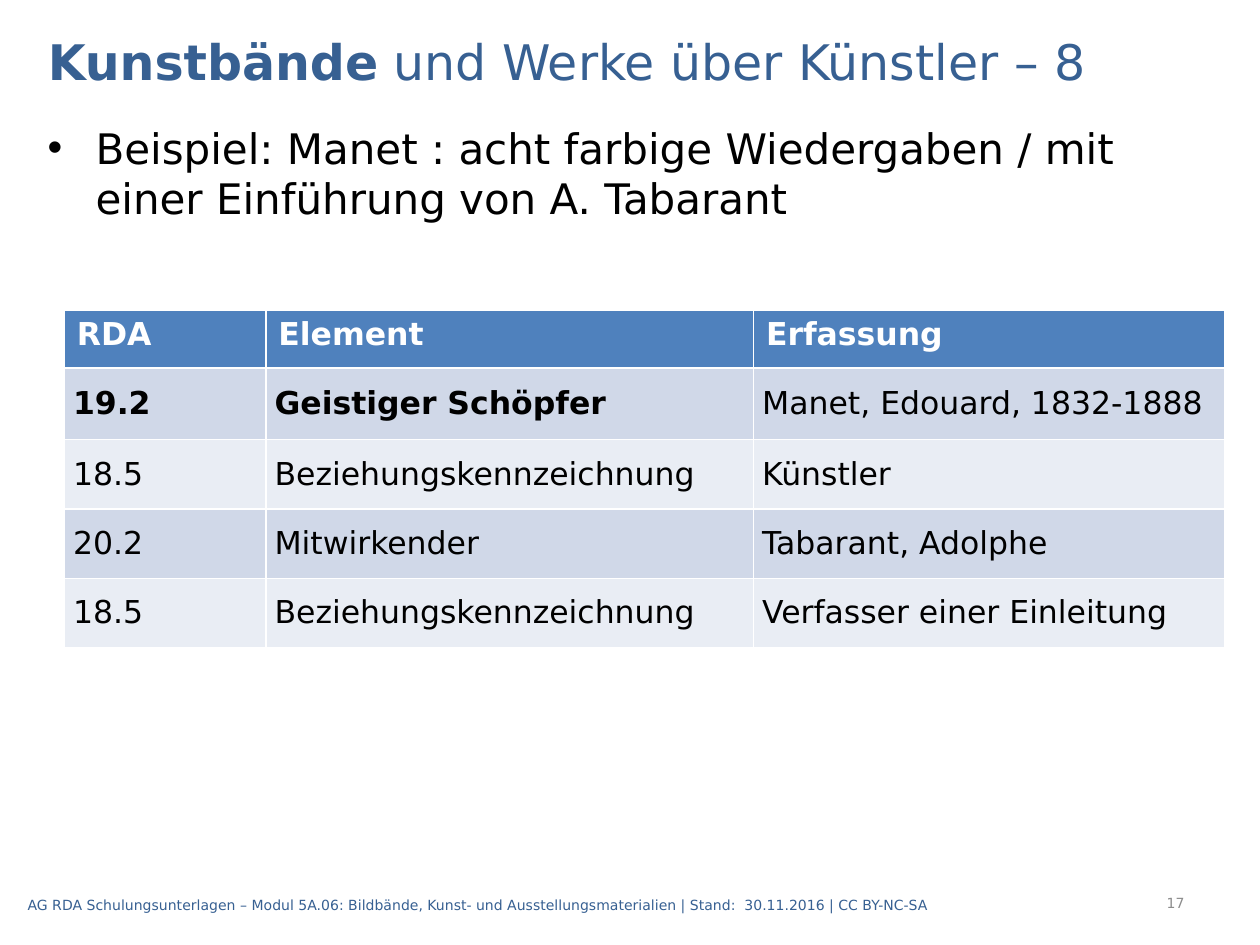
from lxml import etree
from pptx import Presentation
from pptx.dml.color import RGBColor
from pptx.enum.text import MSO_ANCHOR, MSO_AUTO_SIZE, PP_ALIGN
from pptx.oxml.ns import qn
from pptx.util import Inches, Pt

LEFT, RIGHT = PP_ALIGN.LEFT, PP_ALIGN.RIGHT
TOP, MIDDLE = MSO_ANCHOR.TOP, MSO_ANCHOR.MIDDLE
NO_AUTOFIT = MSO_AUTO_SIZE.NONE

FONT = "DejaVu Sans"
TITLE_BLUE = RGBColor(0x37, 0x60, 0x92)
HEADER_BLUE = RGBColor(0x4F, 0x81, 0xBD)
BANDS = (RGBColor(0xD0, 0xD8, 0xE8), RGBColor(0xE9, 0xED, 0xF4))
BLACK = RGBColor(0, 0, 0)
WHITE = RGBColor(0xFF, 0xFF, 0xFF)
GREY = RGBColor(0x8C, 0x8C, 0x8C)

TITLE = [("Kunstbände", True), (" und Werke über Künstler – 8", False)]
EXAMPLE = "Beispiel: Manet : acht farbige Wiedergaben / mit einer Einführung von A. Tabarant"
FOOTER = ("AG RDA Schulungsunterlagen – Modul 5A.06: Bildbände, Kunst- und "
          "Ausstellungsmaterialien | Stand:  30.11.2016 | CC BY-NC-SA")
PAGE_NUMBER = "17"
HEADINGS = ("RDA", "Element", "Erfassung")
ENTRIES = [
    ("19.2", "Geistiger Schöpfer", "Manet, Edouard, 1832-1888"),
    ("18.5", "Beziehungskennzeichnung", "Künstler"),
    ("20.2", "Mitwirkender", "Tabarant, Adolphe"),
    ("18.5", "Beziehungskennzeichnung", "Verfasser einer Einleitung"),
]
BOLD_CELLS = {(1, 0), (1, 1)}
COLUMN_WIDTHS = (1.6, 3.87, 3.74)
ROW_HEIGHTS = (0.46, 0.57, 0.55, 0.55, 0.55)


def add_run(paragraph, text, size, color, bold=False):
    run = paragraph.add_run()
    run.text = text
    run.font.name = FONT
    run.font.size = Pt(size)
    run.font.bold = bold
    run.font.color.rgb = color


def add_text(slide, box, text, size, color, anchor=MIDDLE, align=LEFT):
    frame = slide.shapes.add_textbox(*map(Inches, box)).text_frame
    frame.word_wrap = True
    frame.vertical_anchor = anchor
    paragraph = frame.paragraphs[0]
    paragraph.alignment = align
    add_run(paragraph, text, size, color)
    return paragraph


def add_bullet(paragraph, indent):
    properties = paragraph._p.get_or_add_pPr()
    properties.set("marL", str(Inches(indent)))
    properties.set("indent", str(-Inches(indent)))
    etree.SubElement(properties, qn("a:buFont")).set("typeface", "Arial")
    etree.SubElement(properties, qn("a:buChar")).set("char", "•")


def add_title(slide):
    title = slide.shapes.title
    title.left, title.top, title.width, title.height = map(Inches, (0.28, 0.2, 9.45, 0.56))
    frame = title.text_frame
    frame.auto_size = NO_AUTOFIT
    frame.vertical_anchor = MIDDLE
    frame.paragraphs[0].alignment = LEFT
    for text, bold in TITLE:
        add_run(frame.paragraphs[0], text, 28, TITLE_BLUE, bold)


def fill_cell(cell, text, row, column):
    header = row == 0
    paragraph = cell.text_frame.paragraphs[0]
    cell.fill.solid()
    cell.fill.fore_color.rgb = HEADER_BLUE if header else BANDS[(row - 1) % 2]
    if not header:
        cell.vertical_anchor = MIDDLE
        cell.margin_left = cell.margin_right = Inches(0.07)
        cell.margin_top = cell.margin_bottom = 0
        paragraph.space_after = Pt(6)
    add_run(paragraph, text, 18, WHITE if header else BLACK,
            header or (row, column) in BOLD_CELLS)


def add_entry_table(slide):
    rows = [HEADINGS, *ENTRIES]
    table = slide.shapes.add_table(
        len(rows), len(HEADINGS), Inches(0.51), Inches(2.46),
        Inches(sum(COLUMN_WIDTHS)), Inches(sum(ROW_HEIGHTS))).table
    for column, width in zip(table.columns, COLUMN_WIDTHS):
        column.width = Inches(width)
    for row, height in zip(table.rows, ROW_HEIGHTS):
        row.height = Inches(height)
    for row, texts in enumerate(rows):
        for column, text in enumerate(texts):
            fill_cell(table.cell(row, column), text, row, column)


def main():
    presentation = Presentation()
    presentation.slide_width, presentation.slide_height = Inches(10), Inches(7.5)
    slide = presentation.slides.add_slide(presentation.slide_layouts[5])
    add_title(slide)
    example = add_text(slide, (0.28, 0.92, 9.45, 5.98), EXAMPLE, 24, BLACK, anchor=TOP)
    example.space_before = Pt(4.8)
    add_bullet(example, 0.38)
    add_text(slide, (7.91, 6.97, 1.59, 0.4), PAGE_NUMBER, 8, GREY, align=RIGHT)
    add_text(slide, (0.12, 6.98, 9.21, 0.4), FOOTER, 8, TITLE_BLUE)
    add_entry_table(slide)
    presentation.save("out.pptx")


if __name__ == "__main__":
    main()
